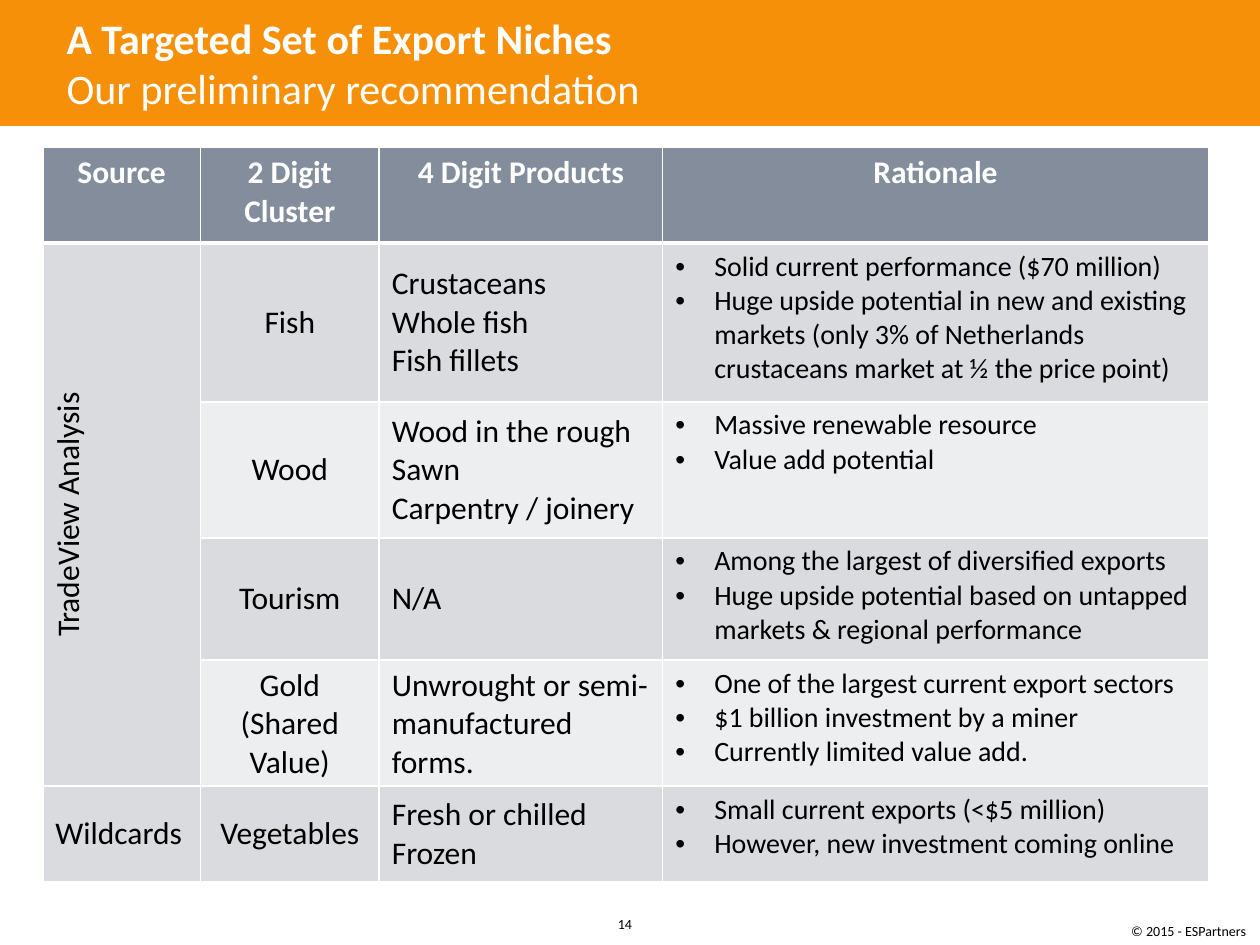
from dataclasses import dataclass

from lxml import etree
from pptx import Presentation
from pptx import util as u
from pptx.dml.color import RGBColor
from pptx.enum import shapes, text
from pptx.oxml import ns


@dataclass(frozen=True)
class Theme:
    font: str = "Calibri"
    band: str = "F69008"
    header: str = "838D9B"
    odd: str = "D9DBDE"
    even: str = "EDEEEF"
    white: str = "FFFFFF"
    black: str = "000000"
    title: int = 24
    cell: int = 18
    bullet: int = 16
    footer: int = 8


@dataclass(frozen=True)
class Niche:
    source: str
    cluster: str
    products: list[str]
    rationale: list[str]
    height: float


@dataclass(frozen=True)
class Style:
    size: int
    color: str
    bold: bool = False
    align: text.PP_ALIGN = text.PP_ALIGN.LEFT
    bullet: bool = False


T = Theme()
LEFT, CENTER = text.PP_ALIGN.LEFT, text.PP_ALIGN.CENTER
TOP, MIDDLE = text.MSO_ANCHOR.TOP, text.MSO_ANCHOR.MIDDLE

HEADER = Style(T.cell, T.white, True, CENTER)
BODY = Style(T.cell, T.black)
CENTERED = Style(T.cell, T.black, align=CENTER)
BULLET = Style(T.bullet, T.black, bullet=True)

HEADINGS = ["Source", "2 Digit Cluster", "4 Digit Products", "Rationale"]
COLUMN_WIDTHS = [1.25, 1.42, 2.25, 4.33]
HEADER_HEIGHT = 0.76
NICHES = [
    Niche("TradeView Analysis", "Fish", ["Crustaceans", "Whole fish", "Fish fillets"],
          ["Solid current performance ($70 million)",
           "Huge upside potential in new and existing markets (only 3% of Netherlands "
           "crustaceans market at ½ the price point)"], 1.26),
    Niche("", "Wood", ["Wood in the rough", "Sawn", "Carpentry / joinery"],
          ["Massive renewable resource", "Value add potential"], 1.08),
    Niche("", "Tourism", ["N/A"],
          ["Among the largest of diversified exports",
           "Huge upside potential based on untapped markets & regional performance"], 0.97),
    Niche("", "Gold (Shared Value)", ["Unwrought or semi-manufactured forms."],
          ["One of the largest current export sectors",
           "$1 billion investment by a miner",
           "Currently limited value add."], 0.97),
    Niche("Wildcards", "Vegetables", ["Fresh or chilled", "Frozen"],
          ["Small current exports (<$5 million)",
           "However, new investment coming online"], 0.76),
]
ANALYSIS_ROWS = 4


def write(tf, lines: list[str], styles: list[Style]) -> None:
    for i, (line, style) in enumerate(zip(lines, styles)):
        p = tf.paragraphs[0] if i == 0 else tf.add_paragraph()
        p.alignment = style.align
        if style.bullet:
            pPr = p._p.get_or_add_pPr()
            pPr.set("marL", str(u.Inches(0.31)))
            pPr.set("indent", str(-u.Inches(0.31)))
            etree.SubElement(pPr, ns.qn("a:buFont")).set("typeface", "Arial")
            etree.SubElement(pPr, ns.qn("a:buChar")).set("char", "•")
        r = p.add_run()
        r.text = line
        r.font.name = T.font
        r.font.size = u.Pt(style.size)
        r.font.bold = style.bold
        r.font.color.rgb = RGBColor.from_string(style.color)


def add_text(s, box: tuple, lines: list[str], styles: list[Style],
             anchor=TOP, wrap: bool = True) -> None:
    tf = s.shapes.add_textbox(*map(u.Inches, box)).text_frame
    tf.word_wrap = wrap
    tf.vertical_anchor = anchor
    write(tf, lines, styles)


def set_borders(cell, top: int = 1, bottom: int = 1) -> None:
    tcPr = cell._tc.get_or_add_tcPr()
    for side, width in (("L", 1), ("R", 1), ("T", top), ("B", bottom)):
        ln = etree.SubElement(tcPr, ns.qn(f"a:ln{side}"), w=str(u.Pt(width)))
        fill = etree.SubElement(ln, ns.qn("a:solidFill"))
        etree.SubElement(fill, ns.qn("a:srgbClr"), val=T.white)


def fill_cell(cell, lines: list[str], style: Style, color: str, anchor=TOP,
              top: int = 1, bottom: int = 1) -> None:
    set_borders(cell, top, bottom)
    cell.fill.solid()
    cell.fill.fore_color.rgb = RGBColor.from_string(color)
    cell.vertical_anchor = anchor
    write(cell.text_frame, lines, [style] * len(lines))


def add_niche_table(s) -> None:
    heights = [HEADER_HEIGHT] + [n.height for n in NICHES]
    box = (0.34, 1.17, sum(COLUMN_WIDTHS), sum(heights))
    tbl = s.shapes.add_table(len(heights), len(COLUMN_WIDTHS), *map(u.Inches, box)).table
    tbl.horz_banding = False
    for column, width in zip(tbl.columns, COLUMN_WIDTHS):
        column.width = u.Inches(width)
    for row, height in zip(tbl.rows, heights):
        row.height = u.Inches(height)

    for c, heading in enumerate(HEADINGS):
        fill_cell(tbl.cell(0, c), [heading], HEADER, T.header, bottom=3)
    for i, n in enumerate(NICHES, start=1):
        color = T.odd if i % 2 else T.even
        top = 3 if i == 1 else 1
        source_style = CENTERED if i == 1 else BODY
        columns = [
            ([n.source] if n.source else [], source_style, MIDDLE),
            ([n.cluster], CENTERED, MIDDLE),
            (n.products, BODY, MIDDLE),
            (n.rationale, BULLET, TOP),
        ]
        for c, (lines, style, anchor) in enumerate(columns):
            fill_cell(tbl.cell(i, c), lines, style, color, anchor, top)

    analysis = tbl.cell(1, 0)
    analysis.merge(tbl.cell(ANALYSIS_ROWS, 0))
    analysis._tc.get_or_add_tcPr().set("vert", "vert270")


def main() -> None:
    prs = Presentation()
    prs.slide_width, prs.slide_height = u.Inches(10), u.Inches(7.5)
    s = prs.slides.add_slide(prs.slide_layouts[6])

    add_text(s, (8.88, 7.27, 1.14, 0.24), ["© 2015 - ESPartners"],
             [Style(T.footer, T.black)], wrap=False)
    band = s.shapes.add_shape(shapes.MSO_SHAPE.RECTANGLE, 0, 0, prs.slide_width, u.Inches(1))
    band.shadow.inherit = False
    band.fill.solid()
    band.fill.fore_color.rgb = RGBColor.from_string(T.band)
    band.line.fill.background()
    add_text(s, (4.75, 7.22, 0.42, 0.2), ["14"], [Style(T.footer, T.black, align=CENTER)])
    add_text(s, (0.43, 0, 7.91, 1),
             ["A Targeted Set of Export Niches", "Our preliminary recommendation"],
             [Style(T.title, T.white, True), Style(T.title, T.white)], MIDDLE)
    add_niche_table(s)
    prs.save("out.pptx")


if __name__ == "__main__":
    main()
